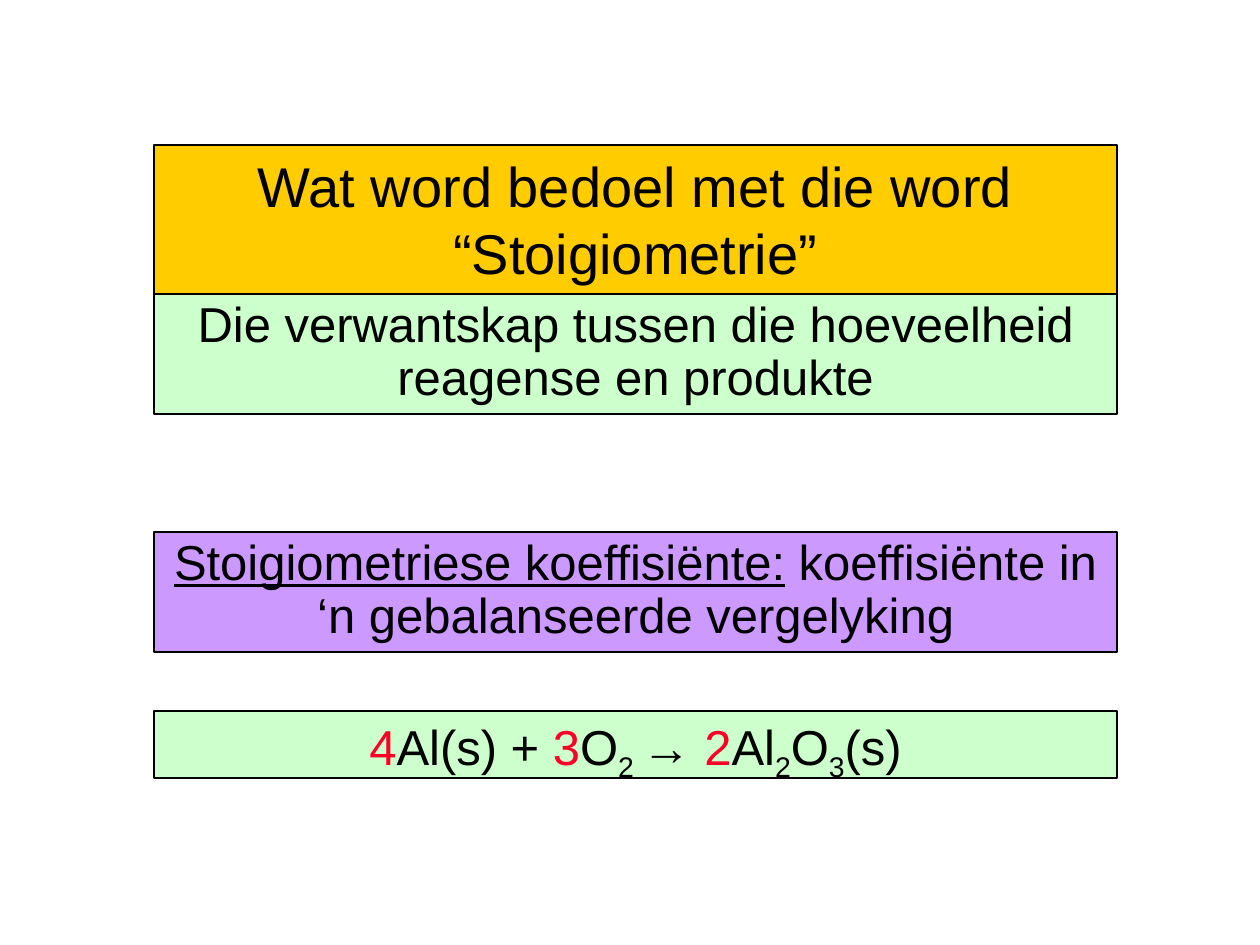
from lxml.etree import SubElement
from pptx import Presentation
from pptx.dml.color import RGBColor
from pptx.enum.shapes import MSO_SHAPE
from pptx.enum.text import MSO_ANCHOR, MSO_AUTO_SIZE, PP_ALIGN
from pptx.oxml.ns import qn
from pptx.util import Emu, Pt

BLACK, RED = "000000", "FC0128"
GOLD, GREEN, PURPLE = "FFCC00", "CCFFCC", "CC99FF"
LEFT, WIDTH = 154, 963


def px(length):
    return Emu(round(length * 914400 / 126))


def color(value):
    return RGBColor.from_string(value)


def add_box(page, top, height, fill):
    box = page.shapes.add_shape(
        MSO_SHAPE.RECTANGLE, px(LEFT), px(top), px(WIDTH), px(height)
    )
    box.shadow.inherit = False
    box.fill.solid()
    box.fill.fore_color.rgb = color(fill)
    box.line.color.rgb = color(BLACK)
    box.line.width = Pt(1)
    frame = box.text_frame
    frame.word_wrap = True
    frame.auto_size = MSO_AUTO_SIZE.SHAPE_TO_FIT_TEXT
    frame.vertical_anchor = MSO_ANCHOR.TOP
    return frame.paragraphs[0]


def format_para(para, before, after=0, line_spacing=None):
    para.alignment = PP_ALIGN.CENTER
    if line_spacing:
        para.line_spacing = line_spacing
    properties = para._p.get_or_add_pPr()
    for tag, percent in (("a:spcBef", before), ("a:spcAft", after)):
        if percent:
            spacing = SubElement(properties, qn(tag))
            SubElement(spacing, qn("a:spcPct")).set("val", str(percent * 1000))


def add_span(para, text, size=28, fill=BLACK, underline=False, subscript=False):
    span = para.add_run()
    span.text = text
    span.font.name = "Arial"
    span.font.size = Pt(size)
    span.font.color.rgb = color(fill)
    if underline:
        span.font.underline = True
    if subscript:
        span._r.get_or_add_rPr().set("baseline", "-25000")


def add_equation(para):
    coefficient, subscript = {"fill": RED}, {"subscript": True}
    for text, style in (
        ("4", coefficient), ("Al(s) + ", {}),
        ("3", coefficient), ("O", {}), ("2 ", subscript), ("→ ", {}),
        ("2", coefficient), ("Al", {}), ("2", subscript),
        ("O", {}), ("3", subscript), ("(s)", {}),
    ):
        add_span(para, text, **style)


def main():
    deck = Presentation()
    deck.slide_width, deck.slide_height = px(1260), px(945)
    page = deck.slides.add_slide(deck.slide_layouts[6])

    definition = add_box(page, 532, 120, PURPLE)
    format_para(definition, 30, line_spacing=0.9)
    add_span(definition, "Stoigiometriese koeffisiënte:", underline=True)
    add_span(definition, " koeffisiënte in ‘n gebalanseerde vergelyking")

    question = add_box(page, 145, 149, GOLD)
    format_para(question, 50)
    add_span(question, "Wat word bedoel met die word “Stoigiometrie”", size=32)

    answer = add_box(page, 294, 120, GREEN)
    format_para(answer, 30, line_spacing=0.9)
    add_span(answer, "Die verwantskap tussen die hoeveelheid reagense en produkte")

    equation = add_box(page, 711, 67, GREEN)
    format_para(equation, 30, after=30, line_spacing=0.9)
    add_equation(equation)

    deck.save("out.pptx")


if __name__ == "__main__":
    main()
